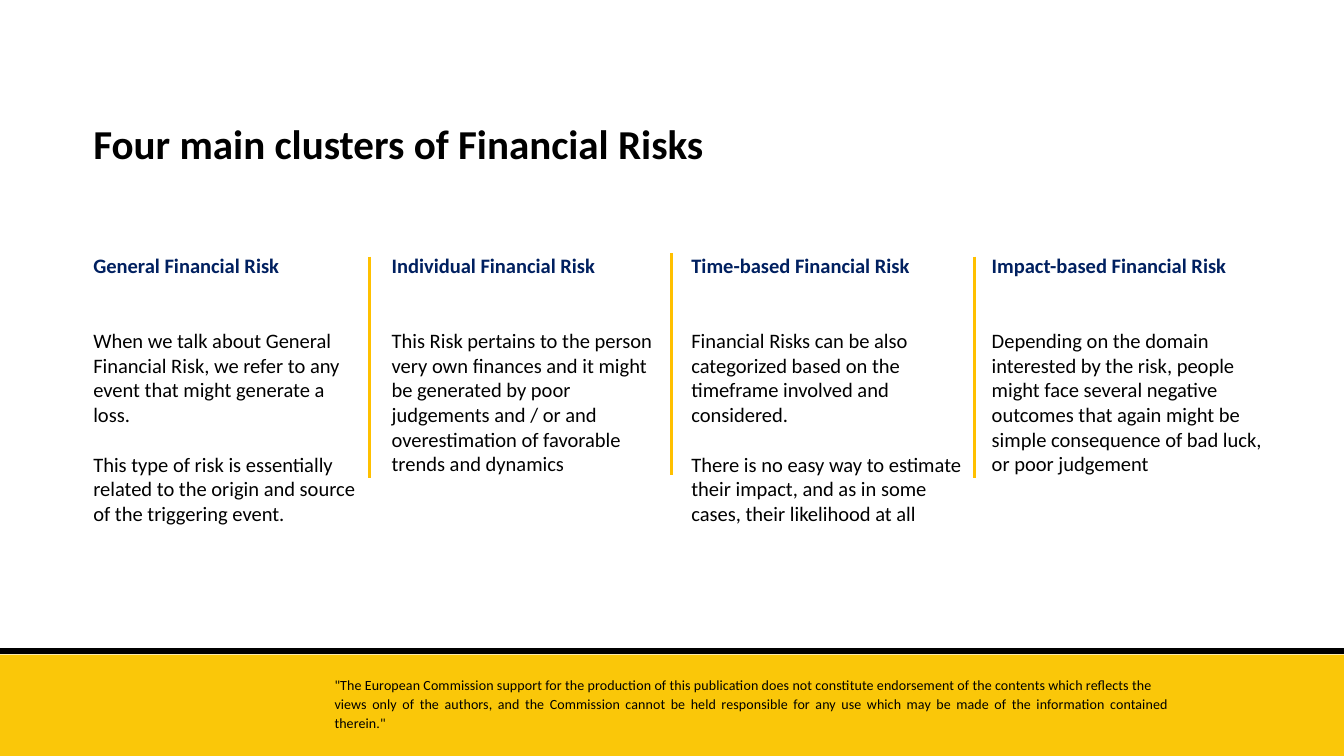
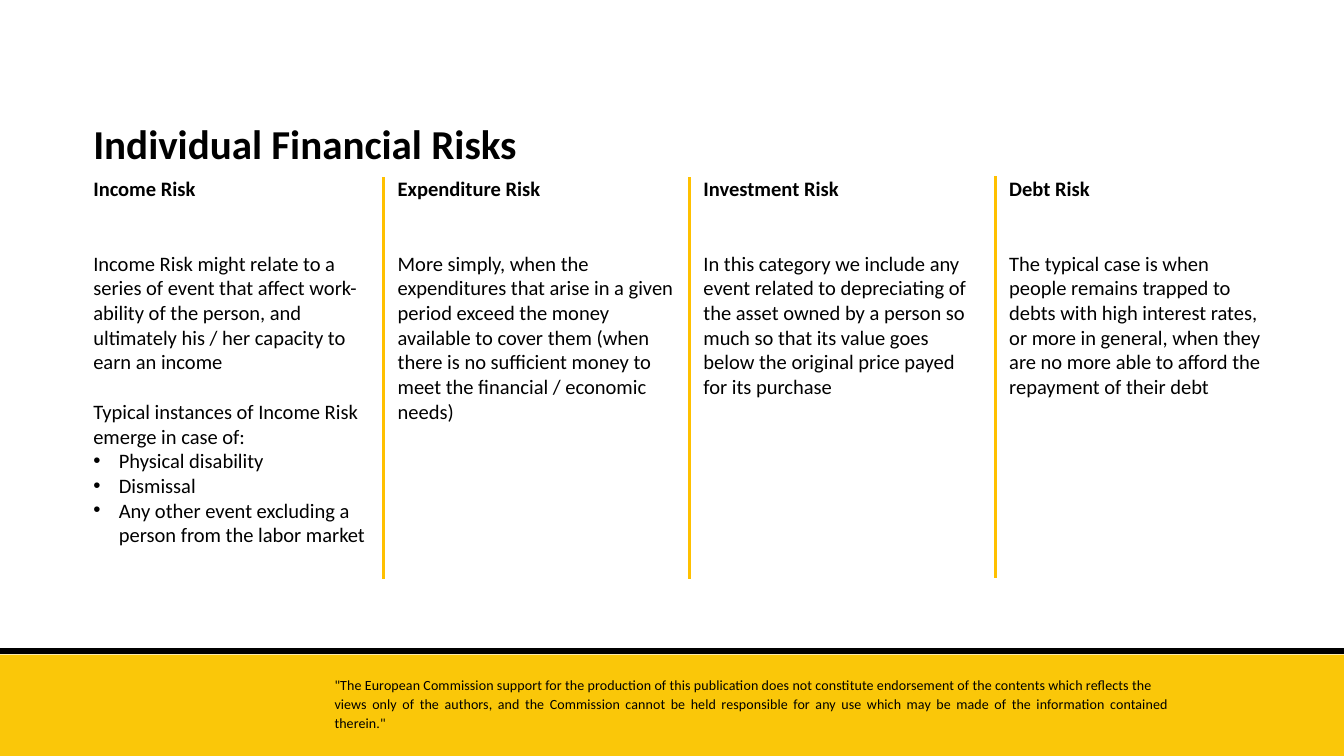
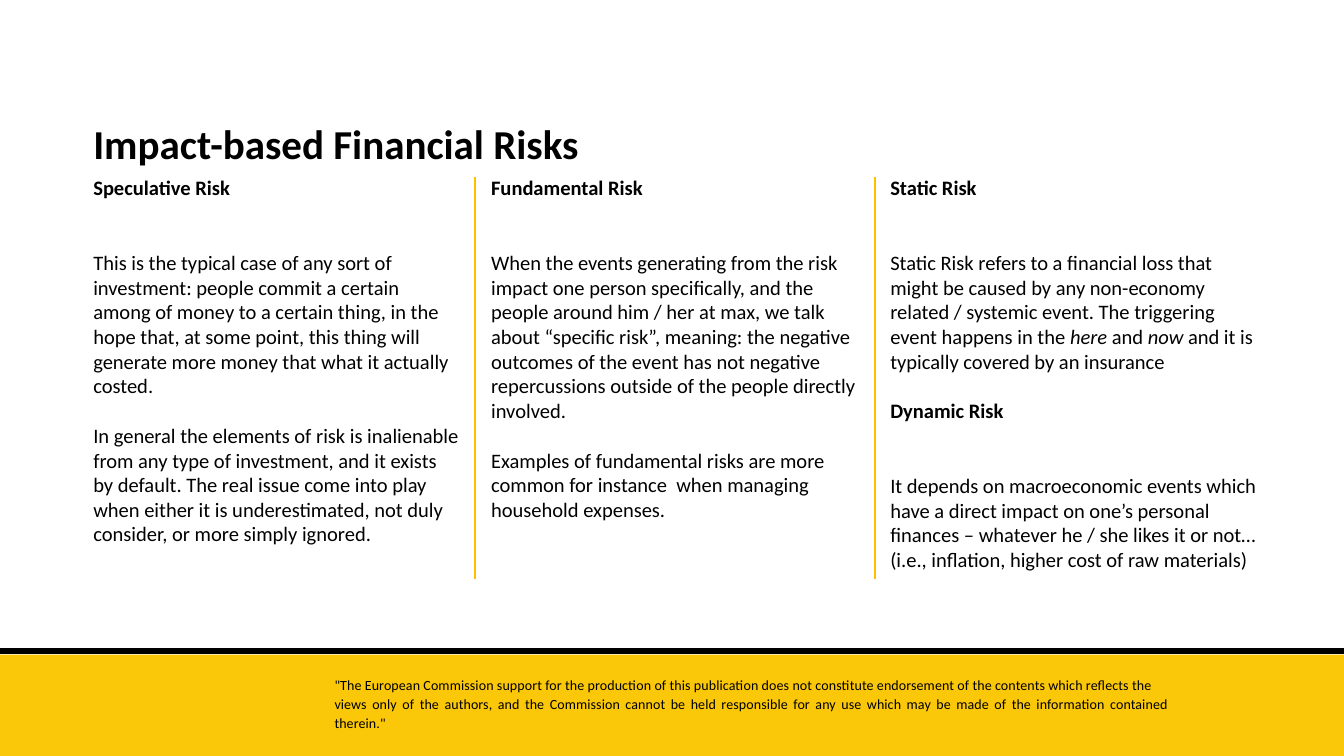
from pptx import Presentation
from pptx.dml.color import RGBColor
from pptx.enum.shapes import MSO_CONNECTOR, MSO_SHAPE
from pptx.enum.text import MSO_AUTO_SIZE, PP_ALIGN
from pptx.oxml.ns import qn
from pptx.util import Pt
from lxml import etree

PX = 9144  # 100 px to the inch
WIDTH, HEIGHT = 2000, 1125
FONT = "Calibri"
BLACK = RGBColor(0x00, 0x00, 0x00)
NAVY = RGBColor(0x00, 0x20, 0x60)
BAND_YELLOW = RGBColor(0xFA, 0xC7, 0x09)
DIVIDER_YELLOW = RGBColor(0xFF, 0xC0, 0x00)
STRAIGHT = MSO_CONNECTOR.STRAIGHT
RECTANGLE = MSO_SHAPE.RECTANGLE
GROW = MSO_AUTO_SIZE.SHAPE_TO_FIT_TEXT
JUSTIFY = PP_ALIGN.JUSTIFY

LINE_PT = 26.85  # height of one line of 22 pt text
BULLET_INDENT = 38
HEAD, LEAD, BODY, BULLET = "head", "lead", "body", "bullet"
GAP_LINES = {HEAD: 1, LEAD: 2, BODY: 1, BULLET: 0}

DISCLAIMER = [
    ("\"The European Commission support for the production of this publication does not "
     "constitute endorsement of the contents which reflects the", Pt(16.1)),
    ("views only of the authors, and the Commission cannot be held responsible for any use "
     "which may be made of the information contained therein.\"", 1.13),
]

# Columns are (left, width, height, paragraphs); dividers are (x, top).
# Asterisks enclose italic words.
SLIDES = [
    {
        "title": "Four main clusters of Financial Risks",
        "head_color": NAVY,
        "top": 372,
        "columns": [
            (129, 424, 417, [
                (HEAD, "General Financial Risk"),
                (LEAD, "When we talk about General Financial Risk, we refer to any event "
                       "that might generate a loss."),
                (BODY, "This type of risk is essentially related to the origin and source "
                       "of the triggering event."),
            ]),
            (573, 426, 343, [
                (HEAD, "Individual Financial Risk"),
                (LEAD, "This Risk pertains to the person very own finances and it might be "
                       "generated by poor judgements and / or and overestimation of "
                       "favorable trends and dynamics"),
            ]),
            (1019, 426, 417, [
                (HEAD, "Time-based Financial Risk"),
                (LEAD, "Financial Risks can be also categorized based on the timeframe "
                       "involved and considered."),
                (BODY, "There is no easy way to estimate their impact, and as in some "
                       "cases, their likelihood at all"),
            ]),
            (1466, 426, 343, [
                (HEAD, "Impact-based Financial Risk"),
                (LEAD, "Depending on the domain interested by the risk, people might face "
                       "several negative outcomes that again might be simple consequence "
                       "of bad luck, or poor judgement"),
            ]),
        ],
        "dividers": [(550, 382), (999, 377), (1450, 382)],
        "divider_height": 330,
    },
    {
        "title": "Individual Financial Risks",
        "head_color": BLACK,
        "top": 257,
        "columns": [
            (129, 432, 602, [
                (HEAD, "Income Risk"),
                (LEAD, "Income Risk might relate to a series of event that affect "
                       "work-ability of the person, and ultimately his / her capacity to "
                       "earn an income"),
                (BODY, "Typical instances of Income Risk emerge in case of:"),
                (BULLET, "Physical disability"),
                (BULLET, "Dismissal"),
                (BULLET, "Any other event excluding a person from the labor market"),
            ]),
            (582, 434, 380, [
                (HEAD, "Expenditure Risk"),
                (LEAD, "More simply, when the expenditures that arise in a given period "
                       "exceed the money available to cover them (when there is no "
                       "sufficient money to meet the financial / economic needs)"),
            ]),
            (1037, 434, 343, [
                (HEAD, "Investment Risk"),
                (LEAD, "In this category we include any event related to depreciating of "
                       "the asset owned by a person so much so that its value goes below "
                       "the original price payed for its purchase"),
            ]),
            (1492, 400, 380, [
                (HEAD, "Debt Risk"),
                (LEAD, "The typical case is when people remains trapped to debts with high "
                       "interest rates, or more in general, when they are no more able to "
                       "afford the repayment of their debt"),
            ]),
        ],
        "dividers": [(571, 264), (1026, 264), (1481, 262)],
        "divider_height": 598,
    },
    {
        "title": "Impact-based Financial Risks",
        "head_color": BLACK,
        "top": 256,
        "columns": [
            (129, 565, 565, [
                (HEAD, "Speculative Risk"),
                (LEAD, "This is the typical case of any sort of investment: people commit "
                       "a certain among of money to a certain thing, in the hope that, at "
                       "some point, this thing will generate more money that what it "
                       "actually costed."),
                (BODY, "In general the elements of risk is inalienable from any type of "
                       "investment, and it exists by default. The real issue come into "
                       "play when either it is underestimated, not duly consider, or more "
                       "simply ignored."),
            ]),
            (721, 568, 528, [
                (HEAD, "Fundamental Risk"),
                (LEAD, "When the events generating from the risk impact one person "
                       "specifically, and the people around him / her at max, we talk "
                       "about “specific risk”, meaning: the negative outcomes of the event "
                       "has not negative repercussions outside of the people directly "
                       "involved."),
                (BODY, "Examples of fundamental risks are more common for instance  when "
                       "managing household expenses."),
            ]),
            (1315, 568, 640, [
                (HEAD, "Static Risk"),
                (LEAD, "Static Risk refers to a financial loss that might be caused by any "
                       "non-economy related / systemic event. The triggering event happens "
                       "in the *here* and *now* and it is typically covered by an "
                       "insurance"),
                (HEAD, "Dynamic Risk"),
                (LEAD, "It depends on macroeconomic events which have a direct impact on "
                       "one’s personal finances – whatever he / she likes it or not…(i.e., "
                       "inflation, higher cost of raw materials)"),
            ]),
        ],
        "dividers": [(707, 264), (1302, 264)],
        "divider_height": 597,
    },
]


def add_text_frame(slide, left, top, width, height):
    frame = slide.shapes.add_textbox(left * PX, top * PX, width * PX, height * PX).text_frame
    frame.word_wrap = True
    frame.auto_size = GROW
    return frame


def add_rule(slide, start, end, color, weight):
    rule = slide.shapes.add_connector(STRAIGHT, *[v * PX for v in (*start, *end)])
    rule.line.color.rgb = color
    rule.line.width = Pt(weight)
    etree.SubElement(rule._element.spPr, qn("a:effectLst"))


prs = Presentation()
prs.slide_width = WIDTH * PX
prs.slide_height = HEIGHT * PX

for content in SLIDES:
    slide = prs.slides.add_slide(prs.slide_layouts[6])

    # Footer band with the disclaimer
    band = slide.shapes.add_shape(RECTANGLE, 0, 974 * PX, WIDTH * PX, 151 * PX)
    band.shadow.inherit = False
    band.fill.solid()
    band.fill.fore_color.rgb = BAND_YELLOW
    band.line.fill.background()
    add_rule(slide, (0, 969), (WIDTH, 969), BLACK, 6.75)

    footer = add_text_frame(slide, 487, 1004, 1263, 88)
    for i, (text, spacing) in enumerate(DISCLAIMER):
        paragraph = footer.add_paragraph() if i else footer.paragraphs[0]
        paragraph.text = text
        paragraph.alignment = JUSTIFY
        paragraph.line_spacing = spacing
        paragraph._p.get_or_add_pPr().set("marL", str(PX))
        run = paragraph.runs[0]
        run.font.name = FONT
        run.font.size = Pt(15)
        run.font.color.rgb = BLACK
        run._r.get_or_add_rPr().set("spc", "10")

    title = add_text_frame(slide, 129, 172, 1025, 84)
    title.text = content["title"]
    title_font = title.paragraphs[0].runs[0].font
    title_font.name = FONT
    title_font.size = Pt(44)
    title_font.bold = True
    title_font.color.rgb = BLACK

    for left, width, height, paragraphs in content["columns"]:
        column = add_text_frame(slide, left, content["top"], width, height)
        for i, (kind, text) in enumerate(paragraphs):
            paragraph = column.add_paragraph() if i else column.paragraphs[0]
            if i:
                paragraph.space_before = Pt(GAP_LINES[kind] * LINE_PT)
            if kind == BULLET:
                properties = paragraph._p.get_or_add_pPr()
                properties.set("marL", str(BULLET_INDENT * PX))
                properties.set("indent", str(-BULLET_INDENT * PX))
                etree.SubElement(properties, qn("a:buFont"), typeface="Arial")
                etree.SubElement(properties, qn("a:buChar"), char="•")
            for part, words in enumerate(text.split("*")):
                run = paragraph.add_run()
                run.text = words
                run.font.name = FONT
                run.font.size = Pt(22)
                run.font.bold = kind == HEAD
                run.font.italic = part % 2 == 1
                run.font.color.rgb = content["head_color"] if kind == HEAD else BLACK

    for x, top in content["dividers"]:
        add_rule(slide, (x, top), (x, top + content["divider_height"]), DIVIDER_YELLOW, 3)

prs.save("out.pptx")
